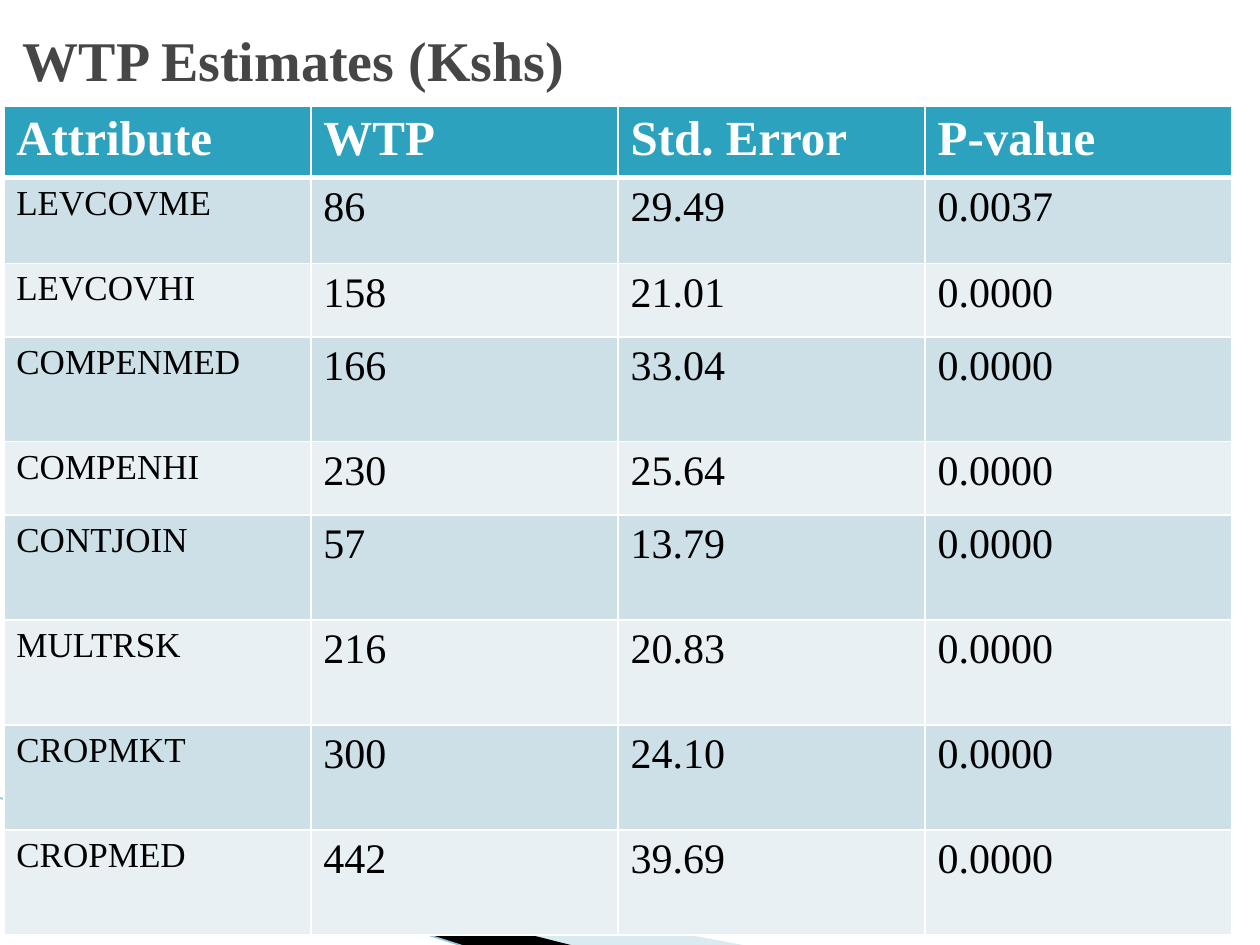
from dataclasses import dataclass
from lxml import etree
from pptx import Presentation
from pptx.dml.color import RGBColor
from pptx.enum.shapes import MSO_CONNECTOR
from pptx.enum.text import MSO_ANCHOR, PP_ALIGN
from pptx.oxml.ns import qn
from pptx.util import Inches, Pt

LINE = MSO_CONNECTOR.STRAIGHT
MID = MSO_ANCHOR.MIDDLE
LEFT = PP_ALIGN.LEFT
FONT = "Times New Roman"
WHITE, BLACK, TEAL = "FFFFFF", "000000", "2DA2BF"
BANDS = ("CDE0E8", "E8F0F4")
WIDTH = 9.75
TALL, SHORT = 5 / 6, 7 / 12
HEADS = ("Attribute", "WTP", "Std. Error", "P-value")


@dataclass
class Row:
    name: str
    wtp: str
    error: str
    prob: str = "0.0000"
    height: float = TALL

    def texts(self) -> tuple:
        return self.name, self.wtp, self.error, self.prob


@dataclass
class Wedge:
    frame: tuple
    points: list
    color: str
    alpha: int = 100


ROWS = [
    Row("LEVCOVME", "86", "29.49", "0.0037", 0.68),
    Row("LEVCOVHI", "158", "21.01", height=SHORT),
    Row("COMPENMED", "166", "33.04"),
    Row("COMPENHI", "230", "25.64", height=SHORT),
    Row("CONTJOIN", "57", "13.79"),
    Row("MULTRSK", "216", "20.83"),
    Row("CROPMKT", "300", "24.10"),
    Row("CROPMED", "442", "39.69"),
]
WEDGES = [
    Wedge((0.78, 5.47, 4.16, 1.58),
          [(0.55, 6.51), (5.95, 7.51), (4.56, 7.51), (0.55, 6.5)], "A0CBDC", 40),
    Wedge((-0.06, 6.33, 4.16, 0.92),
          [(0.53, 6.49), (4.57, 7.51), (3.72, 7.52), (0.54, 6.5)], BLACK),
]


def rgb(code: str) -> RGBColor:
    return RGBColor.from_string(code)


def style(para, size: int, color: str, bold: bool) -> None:
    font = para.font
    font.name, font.size, font.bold = FONT, Pt(size), bold
    font.color.rgb = rgb(color)


def set_frame(shape, frame: tuple) -> None:
    left, top, width, height = (Inches(n) for n in frame)
    dx, dy = shape.left - left, shape.top - top
    for track in shape._element.iter(qn("a:path")):
        track.set("w", str(width))
        track.set("h", str(height))
        for point in track.iter(qn("a:pt")):
            point.set("x", str(int(point.get("x")) + dx))
            point.set("y", str(int(point.get("y")) + dy))
    shape.left, shape.top = left, top
    shape.width, shape.height = width, height


def draw_wedge(shapes, wedge: Wedge) -> None:
    first, *rest = [(Inches(x), Inches(y)) for x, y in wedge.points]
    build = shapes.build_freeform(*first)
    build.add_line_segments(rest, close=True)
    shape = build.convert_to_shape()
    set_frame(shape, wedge.frame)
    shape.shadow.inherit = False
    shape.line.fill.background()
    shape.fill.solid()
    shape.fill.fore_color.rgb = rgb(wedge.color)
    if wedge.alpha < 100:
        tint = shape.fill._xPr.find(".//" + qn("a:srgbClr"))
        etree.SubElement(tint, qn("a:alpha"), val=str(wedge.alpha * 1000))


def draw_edge(shapes) -> None:
    edge = shapes.add_connector(LINE, Inches(-0.01), Inches(6.33),
                                Inches(3.71), Inches(7.52))
    edge.line.color.rgb = rgb("97C5D8")
    edge.line.width = Pt(0.95)
    etree.SubElement(edge._element.spPr, qn("a:effectLst"))


def draw_cell(cell, text: str, size: int, color: str, fill: str,
              bold: bool = False, top: int = 1, base: int = 1) -> None:
    props = cell._tc.get_or_add_tcPr()
    for side, width in zip("LRTB", (1, 1, top, base)):
        line = etree.SubElement(props, qn(f"a:ln{side}"), w=str(Pt(width)))
        paint = etree.SubElement(line, qn("a:solidFill"))
        etree.SubElement(paint, qn("a:srgbClr"), val=WHITE)
    cell.fill.solid()
    cell.fill.fore_color.rgb = rgb(fill)
    cell.text = text
    style(cell.text_frame.paragraphs[0], size, color, bold)


def draw_table(shapes) -> None:
    count = len(HEADS)
    heights = [0.57] + [row.height for row in ROWS]
    table = shapes.add_table(len(heights), count, Inches(0.03), Inches(0.84),
                             Inches(WIDTH), Inches(sum(heights))).table
    table.horz_banding = False
    for col in table.columns:
        col.width = Inches(WIDTH / count)
    for line, height in zip(table.rows, heights):
        line.height = Inches(height)
    for c, head in enumerate(HEADS):
        draw_cell(table.cell(0, c), head, 28, WHITE, TEAL, bold=True, base=3)
    for r, row in enumerate(ROWS):
        for c, text in enumerate(row.texts()):
            draw_cell(table.cell(r + 1, c), text, 24 if c else 20, BLACK,
                      BANDS[r % 2], top=1 if r else 3)


def draw_title(title) -> None:
    title.left, title.top = Inches(0.08), Inches(0.09)
    title.width, title.height = Inches(WIDTH), Inches(0.75)
    title.text = "WTP Estimates (Kshs)"
    title.text_frame.vertical_anchor = MID
    para = title.text_frame.paragraphs[0]
    para.alignment = LEFT
    style(para, 32, "464646", True)


def main() -> None:
    deck = Presentation()
    deck.slide_width, deck.slide_height = Inches(10), Inches(7.5)
    slide = deck.slides.add_slide(deck.slide_layouts[5])
    for wedge in WEDGES:
        draw_wedge(slide.shapes, wedge)
    draw_edge(slide.shapes)
    draw_table(slide.shapes)
    draw_title(slide.shapes.title)
    deck.save("out.pptx")


if __name__ == "__main__":
    main()
